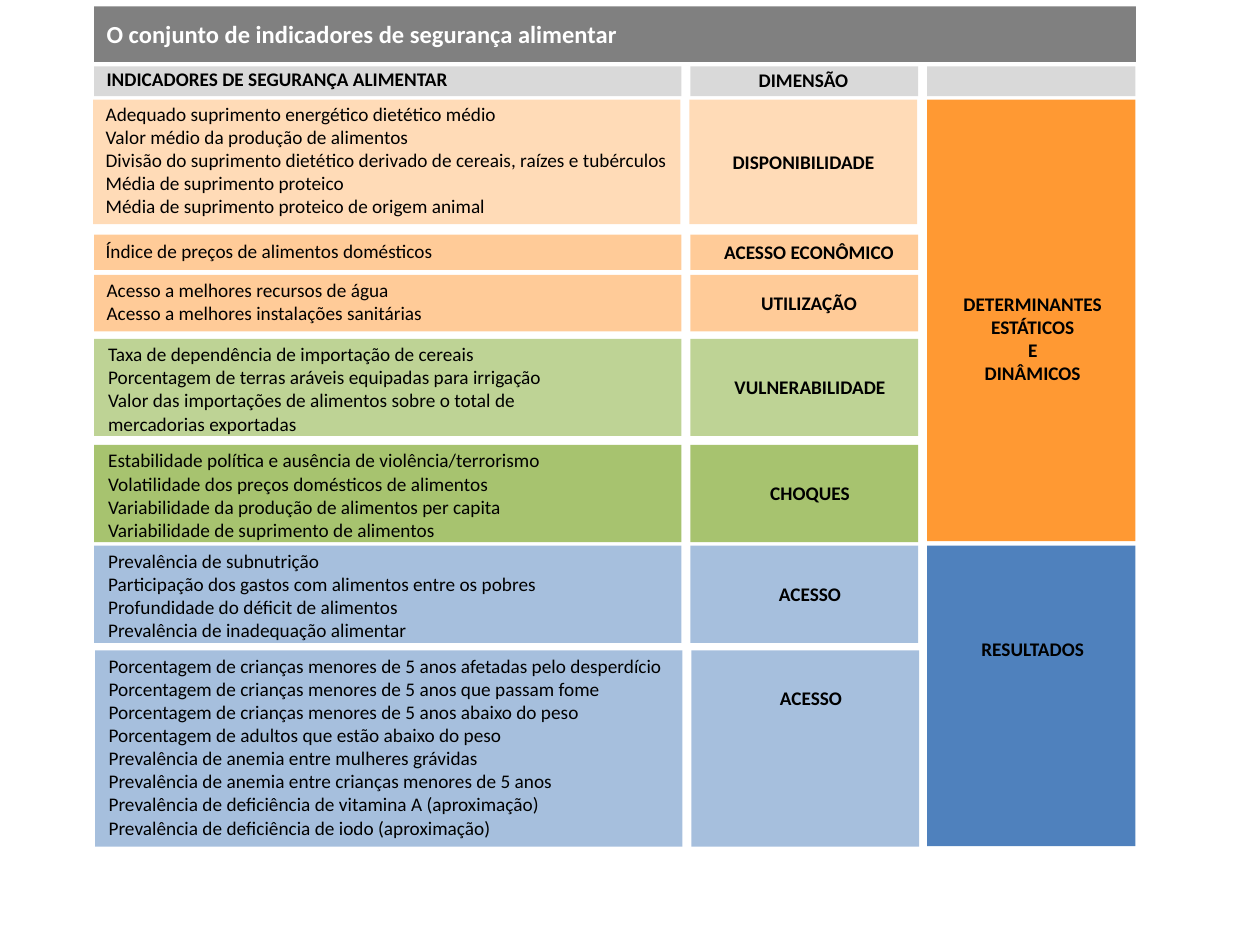
from dataclasses import dataclass
from typing import Any

from lxml import etree
from pptx import Presentation
from pptx import util as u
from pptx.dml.color import RGBColor
from pptx.enum import shapes, text
from pptx.oxml.ns import qn

COLORS = {
    "title": "808080", "header": "D9D9D9", "orange": "FF9933",
    "green": "92B54B", "blue": "4F81BD", "white": "FFFFFF", "black": "000000",
}
LINE, PADDING = 0.47, 0.27  # height of a text line and of both insets
LABEL_HEIGHT = LINE + PADDING

# Columns as (left, width), in centimetres
INDICATORS, DIMENSION, GROUP = (1.9, 11.84), (13.92, 4.59), (18.69, 4.2)
GROUP_TEXT = (19.12, 3.4)


@dataclass
class Board:
    page: Any

    def block(self, column, top, height, color, opacity=100):
        left, width = column
        box = self.page.shapes.add_shape(
            shapes.MSO_SHAPE.RECTANGLE,
            u.Cm(left), u.Cm(top), u.Cm(width), u.Cm(height))
        box.shadow.inherit = False
        box.line.fill.background()
        box.fill.solid()
        box.fill.fore_color.rgb = RGBColor.from_string(COLORS[color])
        if opacity < 100:
            tint = box.element.spPr.find(qn("a:solidFill"))[0]
            etree.SubElement(tint, qn("a:alpha"), val=str(opacity * 1000))

    def lines(self, column, top, height, wording, size=11, bold=False,
              color="black", centered=False):
        left, width = column
        box = self.page.shapes.add_textbox(
            u.Cm(left), u.Cm(top), u.Cm(width), u.Cm(height))
        frame = box.text_frame
        frame.word_wrap = True
        frame.auto_size = text.MSO_AUTO_SIZE.SHAPE_TO_FIT_TEXT
        frame.text = "\n".join(wording)
        for para in frame.paragraphs:
            para.alignment = text.PP_ALIGN.CENTER if centered else text.PP_ALIGN.LEFT
            para.font.name = "Calibri"
            para.font.size = u.Pt(size)
            para.font.bold = bold
            para.font.color.rgb = RGBColor.from_string(COLORS[color])

    def label(self, column, top, *wording):
        self.lines(column, top, LINE * len(wording) + PADDING, wording,
                   bold=True, centered=True)


@dataclass
class Row:
    top: float
    height: float
    color: str
    opacity: int
    dimension: str
    indicators: list
    text_width: float = 10.0
    text_rise: float = 0.05
    text_left: float = 1.93
    label_left: float = 14.33
    shift: float = 0.0
    label_span: float = 0.0  # height in which the label is centred, if not all


ROWS = [
    Row(2.01, 2.51, "orange", 35, "DISPONIBILIDADE", [
        "Adequado suprimento energético dietético médio",
        "Valor médio da produção de alimentos",
        "Divisão do suprimento dietético derivado de cereais, raízes e tubérculos",
        "Média de suprimento proteico",
        "Média de suprimento proteico de origem animal",
    ], 11.84, 0.08, 1.88, 14.2, shift=-0.02),
    Row(4.73, 0.71, "orange", 50, "ACESSO ECONÔMICO", [
        "Índice de preços de alimentos domésticos",
    ], 11.43, 0.03, 1.88, 14.31),
    Row(5.54, 1.14, "orange", 50, "UTILIZAÇÃO", [
        "Acesso a melhores recursos de água",
        "Acesso a melhores instalações sanitárias",
    ], 11.43, 0.05, 1.9, 14.31),
    Row(6.83, 1.96, "green", 59, "VULNERABILIDADE", [
        "Taxa de dependência de importação de cereais",
        "Porcentagem de terras aráveis equipadas para irrigação",
        "Valor das importações de alimentos sobre o total de mercadorias exportadas",
    ]),
    Row(8.97, 1.96, "green", 80, "CHOQUES", [
        "Estabilidade política e ausência de violência/terrorismo",
        "Volatilidade dos preços domésticos de alimentos",
        "Variabilidade da produção de alimentos per capita",
        "Variabilidade de suprimento de alimentos",
    ]),
    Row(11.0, 1.96, "blue", 50, "ACESSO", [
        "Prevalência de subnutrição",
        "Participação dos gastos com alimentos entre os pobres",
        "Profundidade do déficit de alimentos",
        "Prevalência de inadequação alimentar",
    ]),
    Row(13.11, 3.96, "blue", 50, "ACESSO", [
        "Porcentagem de crianças menores de 5 anos afetadas pelo desperdício",
        "Porcentagem de crianças menores de 5 anos que passam fome",
        "Porcentagem de crianças menores de 5 anos abaixo do peso",
        "Porcentagem de adultos que estão abaixo do peso",
        "Prevalência de anemia entre mulheres grávidas",
        "Prevalência de anemia entre crianças menores de 5 anos",
        "Prevalência de deficiência de vitamina A (aproximação)",
        "Prevalência de deficiência de iodo (aproximação)",
    ], 11.76, 0.05, 1.94, 14.35, shift=0.02, label_span=1.96),
]


def main():
    deck = Presentation()
    deck.slide_width, deck.slide_height = u.Cm(25.4), u.Cm(19.05)
    board = Board(deck.slides.add_slide(deck.slide_layouts[6]))

    # Title bar
    board.block((1.9, 21.0), 0.13, 1.12, "title")
    board.lines((1.9, 20.0), 0.25, 0.86,
                ["O conjunto de indicadores de segurança alimentar"],
                size=14, bold=True, color="white")

    # Column headings
    for column in (INDICATORS, DIMENSION, GROUP):
        board.block(column, 1.34, 0.6, "header")
    board.lines((1.9, 11.43), 1.24, LABEL_HEIGHT,
                ["INDICADORES DE SEGURANÇA ALIMENTAR"], bold=True)
    board.label((14.5, 3.4), 1.25, "DIMENSÃO")

    # Groups on the right
    board.block(GROUP, 2.01, 8.9, "orange")
    board.label(GROUP_TEXT, 5.77, "DETERMINANTES", "ESTÁTICOS", "E", "DINÂMICOS")
    board.block(GROUP, 11.0, 6.06, "blue")
    board.label(GROUP_TEXT, 12.73, "RESULTADOS")

    # Indicator rows with their dimension
    for row in ROWS:
        for left, width in (INDICATORS, DIMENSION):
            board.block((left + row.shift, width), row.top, row.height,
                        row.color, row.opacity)
        board.lines((row.text_left, row.text_width), row.top - row.text_rise,
                    LINE * len(row.indicators) + PADDING, row.indicators)
        span = row.label_span or row.height
        board.label((row.label_left, 4.0),
                    row.top + (span - LABEL_HEIGHT) / 2, row.dimension)

    deck.save("out.pptx")


if __name__ == "__main__":
    main()
